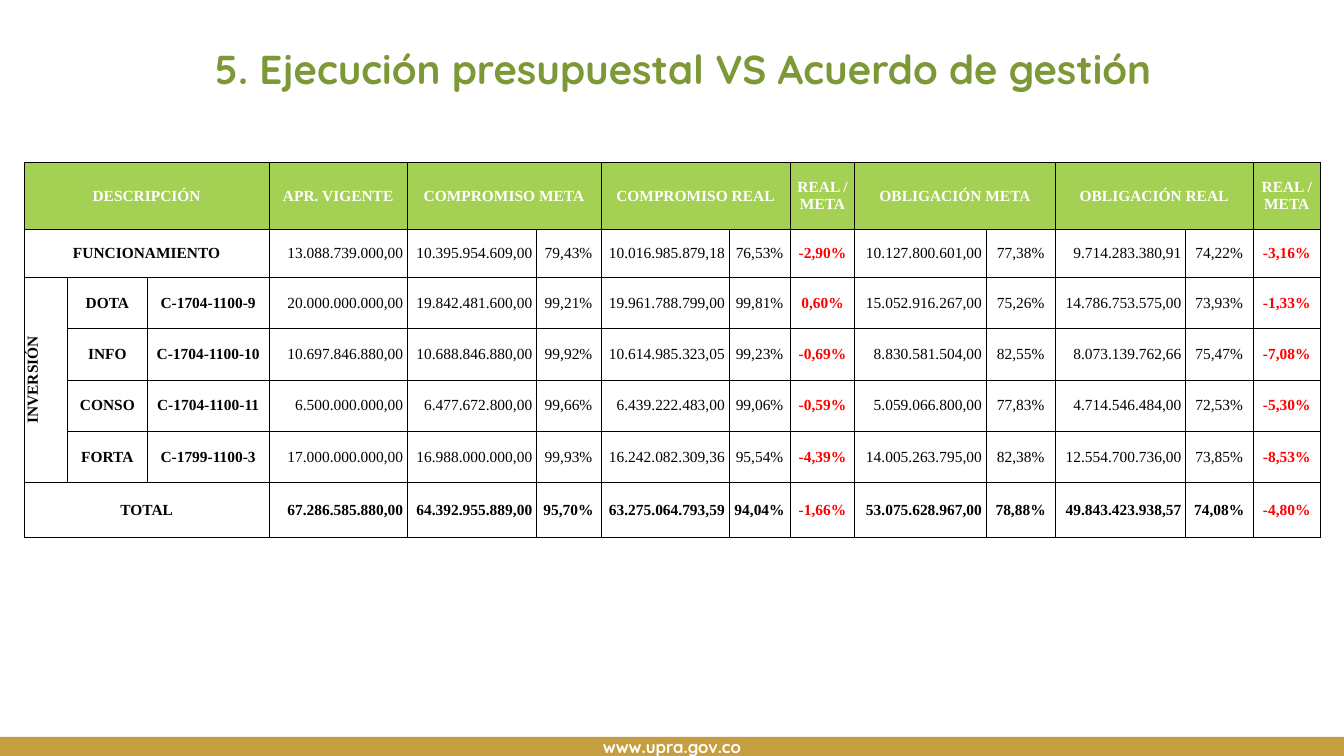
from pptx import Presentation
from pptx.dml.color import RGBColor
from pptx.enum.shapes import MSO_SHAPE
from pptx.enum.text import MSO_ANCHOR, MSO_AUTO_SIZE, PP_ALIGN
from pptx.oxml.ns import qn
from pptx.util import Inches, Pt
from lxml.etree import SubElement

TITLE = "5. Ejecución presupuestal VS Acuerdo de gestión"
WEBSITE = "www.upra.gov.co"
HEADER = ["DESCRIPCIÓN", "", "", "APR. VIGENTE", "COMPROMISO META", "",
          "COMPROMISO REAL", "", "REAL / META", "OBLIGACIÓN META", "",
          "OBLIGACIÓN REAL", "", "REAL / META"]
BUDGET = [
    ["FUNCIONAMIENTO", "", "", "13.088.739.000,00", "10.395.954.609,00", "79,43%",
     "10.016.985.879,18", "76,53%", "-2,90%", "10.127.800.601,00", "77,38%",
     "9.714.283.380,91", "74,22%", "-3,16%"],
    ["INVERSIÓN", "DOTA", "C-1704-1100-9", "20.000.000.000,00", "19.842.481.600,00", "99,21%",
     "19.961.788.799,00", "99,81%", "0,60%", "15.052.916.267,00", "75,26%",
     "14.786.753.575,00", "73,93%", "-1,33%"],
    ["", "INFO", "C-1704-1100-10", "10.697.846.880,00", "10.688.846.880,00", "99,92%",
     "10.614.985.323,05", "99,23%", "-0,69%", "8.830.581.504,00", "82,55%",
     "8.073.139.762,66", "75,47%", "-7,08%"],
    ["", "CONSO", "C-1704-1100-11", "6.500.000.000,00", "6.477.672.800,00", "99,66%",
     "6.439.222.483,00", "99,06%", "-0,59%", "5.059.066.800,00", "77,83%",
     "4.714.546.484,00", "72,53%", "-5,30%"],
    ["", "FORTA", "C-1799-1100-3", "17.000.000.000,00", "16.988.000.000,00", "99,93%",
     "16.242.082.309,36", "95,54%", "-4,39%", "14.005.263.795,00", "82,38%",
     "12.554.700.736,00", "73,85%", "-8,53%"],
    ["TOTAL", "", "", "67.286.585.880,00", "64.392.955.889,00", "95,70%",
     "63.275.064.793,59", "94,04%", "-1,66%", "53.075.628.967,00", "78,88%",
     "49.843.423.938,57", "74,08%", "-4,80%"],
]
COLUMN_WIDTHS = [0.43, 0.79, 1.21, 1.37, 1.28, 0.64, 1.27, 0.61, 0.64, 1.3, 0.69, 1.29, 0.67, 0.67]
ROW_HEIGHTS = [0.67, 0.47, 0.51, 0.51, 0.51, 0.51, 0.54]
MERGES = [(0, 0, 0, 2), (0, 4, 0, 5), (0, 6, 0, 7), (0, 9, 0, 10), (0, 11, 0, 12),
          (1, 0, 1, 2), (2, 0, 5, 0), (6, 0, 6, 2)]
LABEL_COLUMNS = (0, 1, 2)
AMOUNT_COLUMNS = (3, 4, 6, 9, 11)
DEVIATION_COLUMNS = (8, 13)
GROUP_STARTS = (0, 4, 9)
GROUP_ENDS = (3, 8, 13)
COLORS = {"title": "7D9837", "footer": "C59E41", "header": "A4D153",
          "white": "FFFFFF", "black": "000000", "deviation": "FF0000"}


def color(name):
    return RGBColor.from_string(COLORS[name])


def style_font(para, name, size, color_name, bold=True):
    font = para.font
    font.name, font.size, font.bold = name, Pt(size), bold
    font.color.rgb = color(color_name)


def add_borders(cell, widths):
    """Draw the left, right, top and bottom edges, widths in points."""
    properties = cell._tc.get_or_add_tcPr()
    for index, (side, width) in enumerate(zip("LRTB", widths)):
        line = SubElement(properties, qn(f"a:ln{side}"), w=str(Pt(width)))
        fill = SubElement(line, qn("a:solidFill"))
        SubElement(fill, qn("a:srgbClr"), val=COLORS["black"])
        properties.insert(index, line)


def fill_cell(cell, text, row, column):
    is_header, is_total = row == 0, row == len(BUDGET)
    is_amount = column in AMOUNT_COLUMNS and not is_header
    is_deviation = column in DEVIATION_COLUMNS and not is_header
    cell.margin_left = cell.margin_top = cell.margin_bottom = 0
    cell.margin_right = Inches(0.04 if is_amount else 0)
    cell.vertical_anchor = MSO_ANCHOR.MIDDLE
    if is_header:
        cell.fill.solid()
        cell.fill.fore_color.rgb = color("header")
    else:
        cell.fill.background()
    add_borders(cell, (1 if column in GROUP_STARTS else 0.5,
                       1 if column in GROUP_ENDS else 0.5,
                       1 if is_header else 0.5,
                       1 if is_total else 0.5))
    para = cell.text_frame.paragraphs[0]
    para.text = text
    para.alignment = PP_ALIGN.RIGHT if is_amount else PP_ALIGN.CENTER
    ink = "white" if is_header else "deviation" if is_deviation else "black"
    bold = is_header or is_total or is_deviation or column in LABEL_COLUMNS
    style_font(para, "Times New Roman", 11, ink, bold)


def add_footer(page):
    band = page.shapes.add_shape(MSO_SHAPE.RECTANGLE, 0, Inches(7.31), Inches(13.33), Inches(0.19))
    band.shadow.inherit = False
    band.fill.solid()
    band.fill.fore_color.rgb = color("footer")
    band.line.fill.background()
    frame = band.text_frame
    frame.vertical_anchor = MSO_ANCHOR.MIDDLE
    para = frame.paragraphs[0]
    para.text = WEBSITE
    para.alignment = PP_ALIGN.CENTER
    style_font(para, "Quicksand", 12, "white")


def add_title(page):
    title = page.shapes.title
    title.left, title.top = Inches(1.82), Inches(0.44)
    title.width, title.height = Inches(9.7), Inches(0.87)
    frame = title.text_frame
    frame.auto_size = MSO_AUTO_SIZE.NONE
    frame.word_wrap = True
    frame.vertical_anchor = MSO_ANCHOR.TOP
    para = frame.paragraphs[0]
    para.text = TITLE
    para.alignment = PP_ALIGN.RIGHT
    para.line_spacing = 0.9
    style_font(para, "Quicksand", 28.8, "title")


def add_budget_table(page):
    rows = [HEADER] + BUDGET
    table = page.shapes.add_table(len(rows), len(HEADER), Inches(0.24), Inches(1.61),
                                  Inches(sum(COLUMN_WIDTHS)), Inches(sum(ROW_HEIGHTS))).table
    table.first_row = table.horz_banding = False
    for column, width in zip(table.columns, COLUMN_WIDTHS):
        column.width = Inches(width)
    for row, height in zip(table.rows, ROW_HEIGHTS):
        row.height = Inches(height)
    for row, texts in enumerate(rows):
        for column, text in enumerate(texts):
            fill_cell(table.cell(row, column), text, row, column)
    for top, left, bottom, right in MERGES:
        table.cell(top, left).merge(table.cell(bottom, right))
    table.cell(2, 0)._tc.get_or_add_tcPr().set("vert", "vert270")


def main():
    deck = Presentation()
    deck.slide_width, deck.slide_height = Inches(13.33), Inches(7.5)
    page = deck.slides.add_slide(deck.slide_layouts[5])
    add_footer(page)
    add_title(page)
    add_budget_table(page)
    deck.save("out.pptx")


if __name__ == "__main__":
    main()
